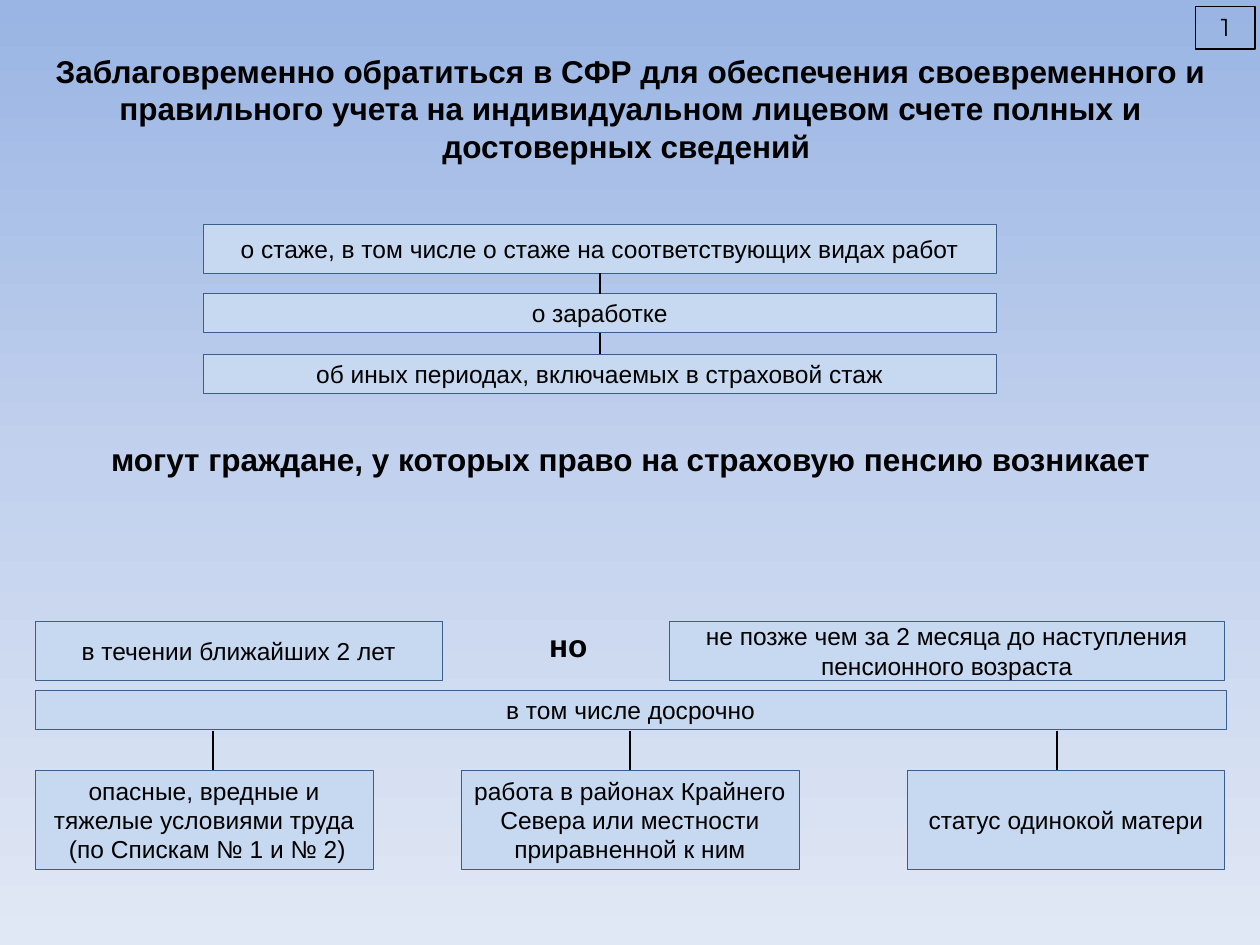
from copy import deepcopy
from dataclasses import dataclass

from pptx import Presentation
from pptx.dml.color import RGBColor
from pptx.enum.shapes import MSO_CONNECTOR, MSO_SHAPE
from pptx.enum.text import MSO_ANCHOR, MSO_AUTO_SIZE, PP_ALIGN
from pptx.oxml.ns import qn
from pptx.util import Inches, Pt


@dataclass(frozen=True)
class Theme:
    ink: str = "000000"
    fill: str = "C6D9F1"
    edge: str = "3A5F8C"
    sky: tuple = ("9AB5E4", "C2D1ED", "E1E8F5")
    font: str = "Arial"
    badge: str = "Montserrat"
    head: int = 18
    body: int = 14
    thin: float = 0.25
    rule: float = 0.75
    link: float = 1.25


WIDE, HIGH = 10, 7.5
COLS, ROWS = 100, 75


def tint(code):
    return RGBColor.from_string(code)


def across(cols):
    return Inches(cols * WIDE / COLS)


def down(rows):
    return Inches(rows * HIGH / ROWS)


def place(left, top, width, height):
    return across(left), down(top), across(width), down(height)


def write(frame, text, *, font, size, color, bold=False, anchor=MSO_ANCHOR.TOP):
    frame.word_wrap = True
    frame.auto_size = MSO_AUTO_SIZE.NONE
    frame.vertical_anchor = anchor
    frame.text = text
    for para in frame.paragraphs:
        para.alignment = PP_ALIGN.CENTER
        for run in para.runs:
            run.font.name = font
            run.font.size = Pt(size)
            run.font.bold = bold
            run.font.color.rgb = tint(color)


class Deck:
    def __init__(self, theme):
        self.theme = theme
        self.file = Presentation()
        self.file.slide_width = Inches(WIDE)
        self.file.slide_height = Inches(HIGH)
        self.slide = self.file.slides.add_slide(self.file.slide_layouts[5])

    def sky(self):
        fill = self.slide.background.fill
        fill.gradient()
        fill.gradient_angle = 270
        first = self.slide.element.find(".//" + qn("a:gs"))
        first.addnext(deepcopy(first))
        for stop, color, spot in zip(fill.gradient_stops, self.theme.sky, (0, 0.5, 1)):
            stop.color.rgb = tint(color)
            stop.position = spot

    def bold(self, shape, text):
        look = self.theme
        write(shape.text_frame, text, font=look.font, size=look.head,
              color=look.ink, bold=True)

    def title(self, text, *area):
        shape = self.slide.shapes.title
        shape.left, shape.top, shape.width, shape.height = place(*area)
        self.bold(shape, text)

    def label(self, text, *area):
        self.bold(self.slide.shapes.add_textbox(*place(*area)), text)

    def frame(self, area, edge, width):
        shape = self.slide.shapes.add_shape(MSO_SHAPE.RECTANGLE, *place(*area))
        shape.shadow.inherit = False
        shape.line.color.rgb = tint(edge)
        shape.line.width = Pt(width)
        return shape

    def box(self, text, *area):
        look = self.theme
        shape = self.frame(area, look.edge, look.thin)
        shape.fill.solid()
        shape.fill.fore_color.rgb = tint(look.fill)
        write(shape.text_frame, text, font=look.font, size=look.body,
              color=look.ink, anchor=MSO_ANCHOR.MIDDLE)

    def badge(self, text, *area):
        look = self.theme
        shape = self.frame(area, look.ink, look.rule)
        shape.fill.background()
        write(shape.text_frame, text, font=look.badge, size=look.body, color=look.ink)

    def link(self, col, top, end):
        line = self.slide.shapes.add_connector(
            MSO_CONNECTOR.STRAIGHT, across(col), down(top), across(col), down(end))
        line.line.color.rgb = tint(self.theme.ink)
        line.line.width = Pt(self.theme.link)
        part = line.element.spPr
        part.append(part.makeelement(qn("a:effectLst"), {}))


def main():
    deck = Deck(Theme())
    deck.sky()
    edge, full = 2.8, 94.5

    deck.title(
        "Заблаговременно обратиться в СФР для обеспечения своевременного и "
        "правильного учета на индивидуальном лицевом счете полных и "
        "достоверных сведений ", edge, 3.6, full, 10.1)
    deck.label("могут граждане, у которых право на страховую пенсию возникает",
               edge, 34.4, full, 4)
    deck.label("но", 20.1, 49.2, 50, 4)

    facts = (
        ("о стаже, в том числе о стаже на соответствующих видах работ", 17.8, 3.9),
        ("о заработке", 23.3, 3.1),
        ("об иных периодах, включаемых в страховой стаж", 28.1, 3.1),
    )
    for text, top, height in facts:
        deck.box(text, 16.1, top, 63, height)
    for (_, top, height), (_, below, _) in zip(facts, facts[1:]):
        deck.link(47.6, top + height, below)

    terms = (
        ("в течении ближайших 2 лет", edge, 32.3),
        ("не позже чем за 2 месяца до наступления пенсионного возраста", 53.1, 44.1),
    )
    for text, left, width in terms:
        deck.box(text, left, 49.3, width, 4.7)

    deck.box("в том числе досрочно", edge, 54.8, full, 3.1)
    cases = (
        ("опасные, вредные и тяжелые условиями труда\n (по Спискам № 1 и № 2)",
         edge, 26.8, 16.9),
        ("работа в районах Крайнего Севера или местности приравненной к ним",
         36.6, 26.8, 50),
        ("статус одинокой матери", 72, 25.2, 83.9),
    )
    for text, left, width, stem in cases:
        deck.box(text, left, 61.1, width, 7.9)
        deck.link(stem, 58, 61.1)

    deck.badge("1", 94.9, 0.5, 4.7, 3.4)
    deck.file.save("out.pptx")


if __name__ == "__main__":
    main()
